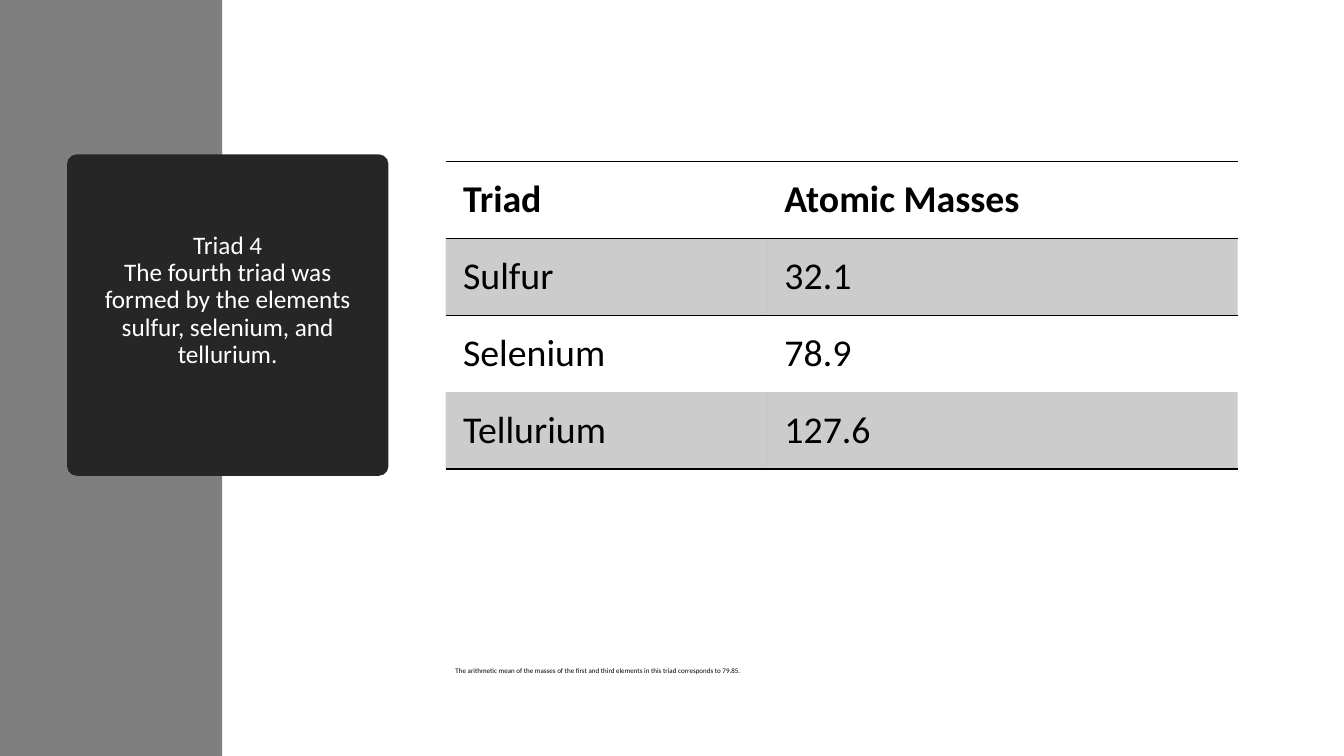
"""Build the slide on the fourth triad of elements and their atomic masses."""
from lxml import etree
from pptx import Presentation
from pptx.dml.color import RGBColor
from pptx.enum.shapes import MSO_SHAPE
from pptx.enum.text import MSO_ANCHOR, PP_ALIGN
from pptx.oxml.ns import qn
from pptx.util import Cm, Pt

RECTANGLE = MSO_SHAPE.RECTANGLE
ROUNDED = MSO_SHAPE.ROUNDED_RECTANGLE
MIDDLE = MSO_ANCHOR.MIDDLE
BOTTOM = MSO_ANCHOR.BOTTOM
CENTER = PP_ALIGN.CENTER
NO_STYLE = "{2D5ABB26-0587-4C30-8999-92F81FD0307C}"
BLACK = "000000"


def paint(color_format, hex_color):
    color_format.rgb = RGBColor.from_string(hex_color)


def style_text(paragraph, size, hex_color, bold=False):
    for run in paragraph.runs:
        run.font.name = "Calibri"
        run.font.size = Pt(size)
        run.font.bold = bold
        paint(run.font.color, hex_color)


prs = Presentation()
prs.slide_width, prs.slide_height = Cm(33.87), Cm(19.05)
slide = prs.slides.add_slide(prs.slide_layouts[6])

side_band = slide.shapes.add_shape(RECTANGLE, 0, 0, Cm(5.6), prs.slide_height)
title_card = slide.shapes.add_shape(ROUNDED, Cm(1.69), Cm(3.89), Cm(8.1), Cm(8.1))
title_card.adjustments[0] = 0.03
for panel, color in ((side_band, "7F7F7F"), (title_card, "262626")):
    panel.shadow.inherit = False
    panel.fill.solid()
    paint(panel.fill.fore_color, color)
    panel.line.fill.background()

title = title_card.text_frame
title.word_wrap = True
title.vertical_anchor = MIDDLE
title.margin_left = title.margin_right = Cm(0.75)
title.margin_top, title.margin_bottom = Cm(0.13), Cm(0.85)
title_line = title.paragraphs[0]
title_line.text = (
    "Triad 4\vThe fourth triad was formed by the elements "
    "sulfur, selenium, and tellurium."
)
title_line.alignment = CENTER
title_line.line_spacing = 0.9
style_text(title_line, 18, "FFFFFF")

mean_note = slide.shapes.add_textbox(Cm(11.23), Cm(13.56), Cm(19.96), Cm(3.58)).text_frame
mean_note.word_wrap = True
mean_note.vertical_anchor = BOTTOM
mean_line = mean_note.paragraphs[0]
mean_line.text = (
    "The arithmetic mean of the masses of the first and third elements "
    "in this triad corresponds to 79.85."
)
mean_line.line_spacing = 0.8
style_text(mean_line, 5, BLACK)

masses = [
    ("Triad", "Atomic Masses"),
    ("Sulfur", "32.1"),
    ("Selenium", "78.9"),
    ("Tellurium", "127.6"),
]
ruled_edges = {0: ("lnT", "lnB"), 1: ("lnT",), 3: ("lnB",)}
mass_frame = slide.shapes.add_table(
    len(masses), 2, Cm(11.23), Cm(4.06), Cm(19.96), Cm(7.76)
)
mass_table = mass_frame.table
mass_table.first_row = True
mass_table.horz_banding = False
next(mass_frame._element.iter(qn("a:tableStyleId"))).text = NO_STYLE
mass_table.columns[0].width, mass_table.columns[1].width = Cm(8.1), Cm(11.86)

for row, entries in enumerate(masses):
    mass_table.rows[row].height = Cm(1.94)
    for column, entry in enumerate(entries):
        cell = mass_table.cell(row, column)
        cell.vertical_anchor = MIDDLE
        cell.margin_left = cell.margin_right = Cm(0.44)
        cell.margin_top = cell.margin_bottom = Cm(0.33)
        entry_line = cell.text_frame.paragraphs[0]
        entry_line.text = entry
        style_text(entry_line, 27, BLACK, bold=row == 0)

        properties = cell._tc.get_or_add_tcPr()
        for edge in ruled_edges.get(row, ()):
            rule = etree.SubElement(properties, qn(f"a:{edge}"), w=str(Pt(1)))
            rule_fill = etree.SubElement(rule, qn("a:solidFill"))
            etree.SubElement(rule_fill, qn("a:srgbClr"), val=BLACK)

        if row % 2:
            cell.fill.solid()
            paint(cell.fill.fore_color, BLACK)
            shade = properties.find(qn("a:solidFill")).find(qn("a:srgbClr"))
            etree.SubElement(shade, qn("a:alpha"), val="20000")
        else:
            cell.fill.background()

prs.save("out.pptx")
